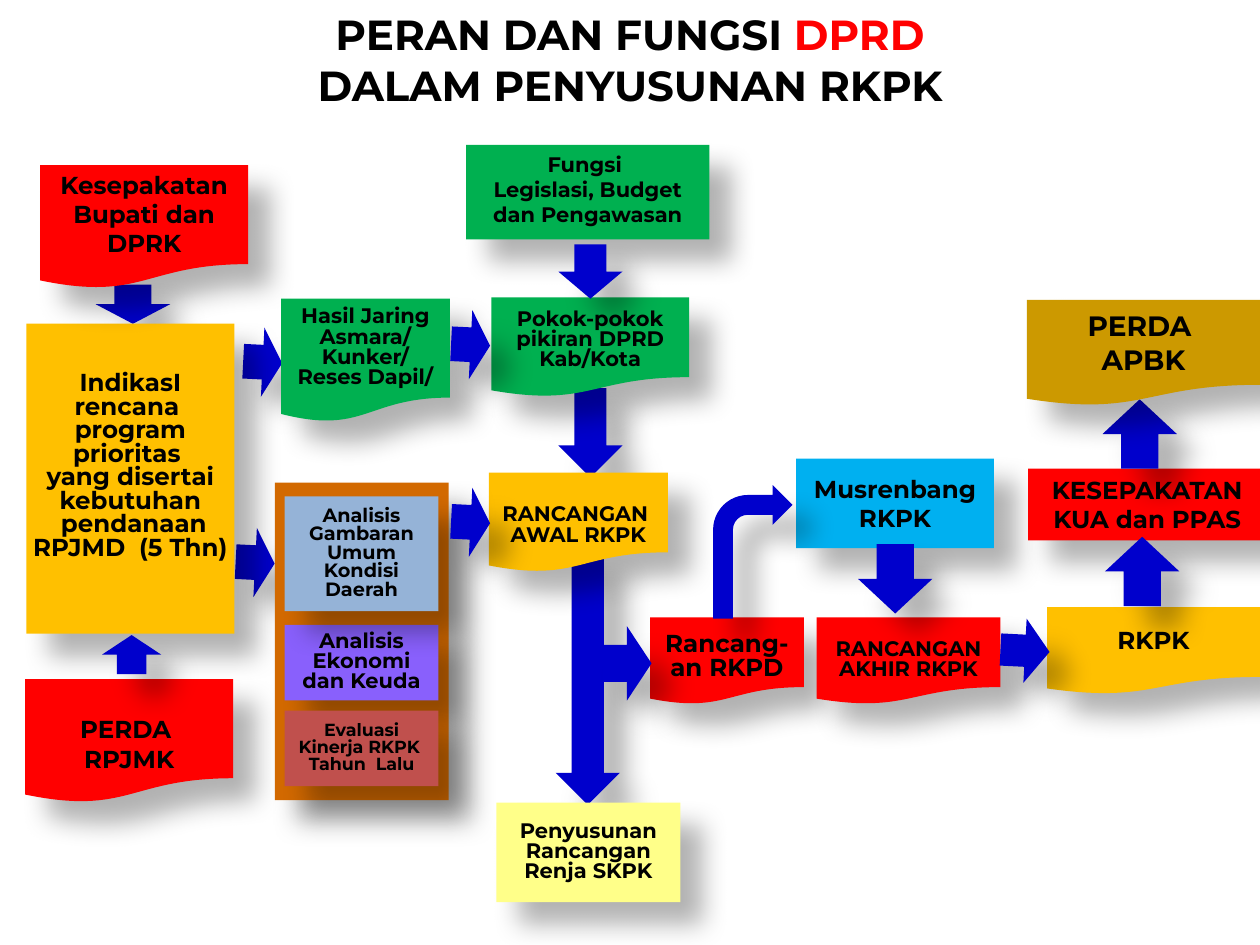
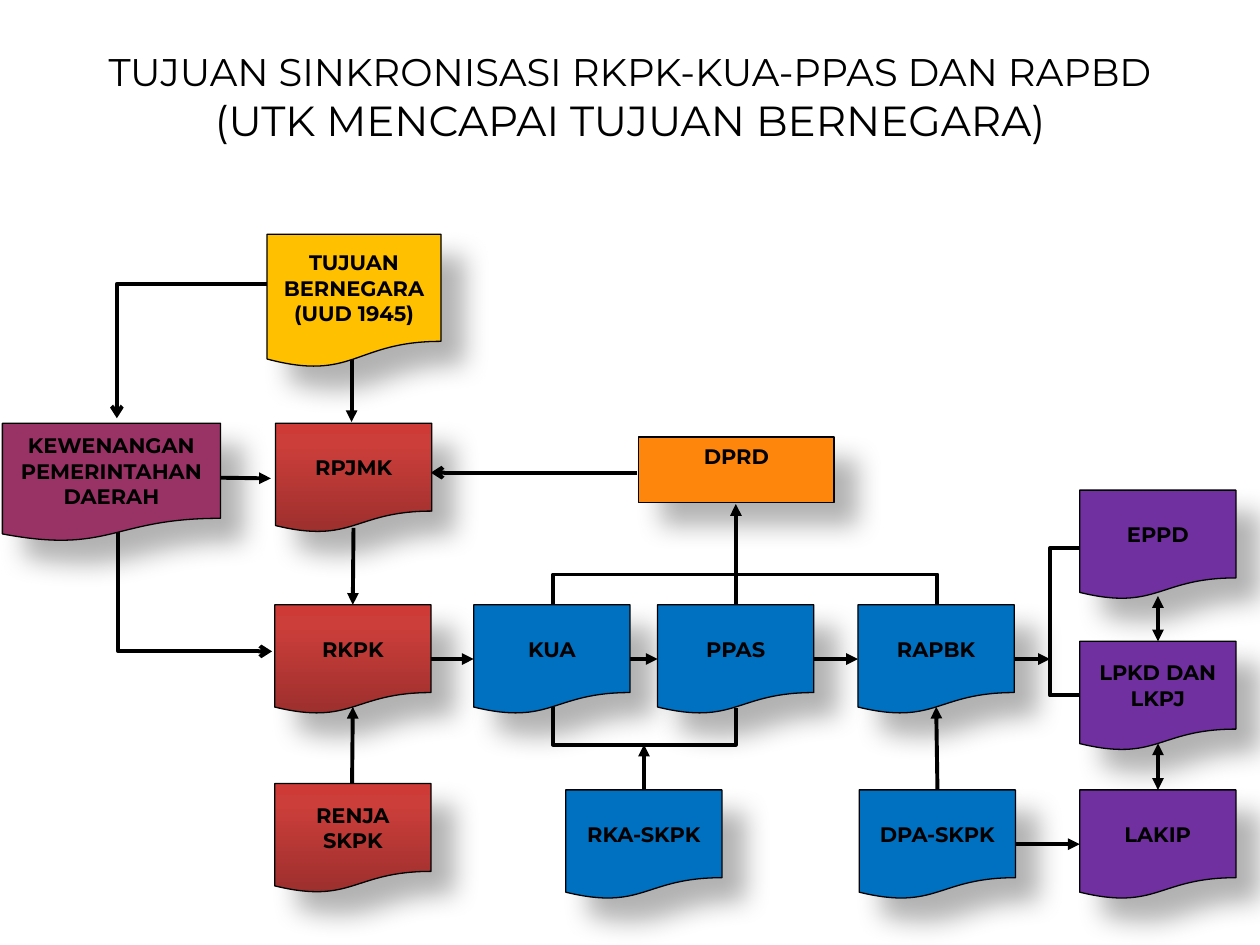
from copy import deepcopy

from lxml import etree
from pptx import Presentation
from pptx.dml.color import RGBColor
from pptx.enum.shapes import MSO_CONNECTOR, MSO_SHAPE
from pptx.enum.text import MSO_ANCHOR, PP_ALIGN
from pptx.oxml.ns import qn
from pptx.util import Pt

COLORS = {
    "black": "000000", "red": "FF0000", "amber": "FFC000", "green": "00B050",
    "arrow": "0000CC", "frame": "D26900", "violet": "8960FC", "steel": "95B3D7",
    "brick": "C0504D", "cream": "FFFF89", "sky": "00B0F0", "gold": "CC9900",
    "blue": "0070C0", "orange": "FF860D", "purple": "7030A0", "plum": "993366",
}
BRICK_STOPS = [(0, "9C2F2D"), (0.8, "CB3E3A"), (1, "CE3B37")]
FONT = "Montserrat"
DOC, RECT = MSO_SHAPE.FLOWCHART_DOCUMENT, MSO_SHAPE.RECTANGLE
TOP, MIDDLE, BOTTOM = MSO_ANCHOR.TOP, MSO_ANCHOR.MIDDLE, MSO_ANCHOR.BOTTOM
DOC_W, DOC_H = 89.3, 62.6
RIGHT = 272.9  # clockwise turn that makes a down arrow point right, slightly tilted


def rgb(name):
    return RGBColor.from_string(COLORS[name])


def set_all(obj, values):
    for name, value in values.items():
        setattr(obj, name, value)


def add_shadow(sp):
    """Soft shadow cast to the lower right, whatever the rotation."""
    spPr = sp._element.spPr
    sp.shadow.inherit = False
    effects = spPr.find(qn("a:effectLst"))
    shadow = etree.SubElement(effects, qn("a:outerShdw"), {
        "blurRad": str(Pt(15)), "dist": str(Pt(18)), "dir": "2700000",
        "algn": "ctr", "rotWithShape": "0"})
    color = etree.SubElement(shadow, qn("a:srgbClr"), val=COLORS["black"])
    etree.SubElement(color, qn("a:alpha"), val="30000")


def fill_gradient(sp):
    sp.fill.gradient()
    sp.fill.gradient_angle = 90
    stops = sp._element.spPr.find(".//" + qn("a:gsLst"))
    stops.append(deepcopy(stops[-1]))
    for stop, (position, color) in zip(sp.fill.gradient_stops, BRICK_STOPS):
        stop.position = position
        stop.color.rgb = RGBColor.from_string(color)


def add_figure(slide, kind, at, fill, outlined=False):
    sp = slide.shapes.add_shape(kind, *map(Pt, at))
    if fill == "gradient":
        fill_gradient(sp)
    else:
        sp.fill.solid()
        sp.fill.fore_color.rgb = rgb(fill)
    if outlined:
        sp.line.color.rgb = rgb("black")
        sp.line.width = Pt(0.75)
    else:
        sp.line.fill.background()
    add_shadow(sp)
    return sp


def write(tf, lines, spacing=None):
    """Each line is a paragraph: a list of (text, size, bold, colour) runs."""
    tf.word_wrap = True
    for i, runs in enumerate(lines):
        p = tf.paragraphs[0] if i == 0 else tf.add_paragraph()
        p.alignment = PP_ALIGN.CENTER
        if spacing:
            p.line_spacing = spacing
        for text, size, bold, color in runs:
            r = p.add_run()
            r.text = text
            set_all(r.font, {"name": FONT, "size": Pt(size), "bold": bold})
            r.font.color.rgb = rgb(color)


def add_box(slide, kind, at, fill, lines, size=12, anchor=MIDDLE,
            spacing=None, margins=None, outlined=False):
    sp = add_figure(slide, kind, at, fill, outlined)
    sp.text_frame.vertical_anchor = anchor
    set_all(sp.text_frame, margins or {})
    write(sp.text_frame, [[(line, size, True, "black")] for line in lines], spacing)


def add_arrow(slide, at, rotation=0, kind=MSO_SHAPE.DOWN_ARROW):
    add_figure(slide, kind, at, "arrow").rotation = rotation


def add_title(slide, at, lines, anchor=TOP):
    tb = slide.shapes.add_textbox(*map(Pt, at))
    tb.text_frame.vertical_anchor = anchor
    write(tb.text_frame, lines)


def add_link(slide, points, end=None, start=None):
    """Straight connector for two points, an open right-angled path for more."""
    pts = [(Pt(x), Pt(y)) for x, y in points]
    if len(pts) == 2:
        sp = slide.shapes.add_connector(MSO_CONNECTOR.STRAIGHT, *pts[0], *pts[1])
        etree.SubElement(sp._element.spPr, qn("a:effectLst"))
    else:
        builder = slide.shapes.build_freeform(*pts[0])
        builder.add_line_segments(pts[1:], close=False)
        sp = builder.convert_to_shape()
        sp.fill.background()
        sp.shadow.inherit = False
    sp.line.color.rgb = rgb("black")
    sp.line.width = Pt(2.25)
    ln = sp.line._get_or_add_ln()
    for tag, head in (("a:headEnd", start), ("a:tailEnd", end)):
        if head:
            etree.SubElement(ln, qn(tag), type=head)


def build_roles(slide):
    for at, turn in [
        ((317.5, 318.2, 36.7, 141.8), 0),
        ((319, 221.8, 36.7, 51.1), 0),
        ((54.7, 162.7, 42.5, 22.3), 0),
        ((126, 310.3, 39.6, 22.3), RIGHT),
        ((130.3, 195.8, 39.6, 22.3), RIGHT),
    ]:
        add_arrow(slide, at, turn)

    flush = {f"margin_{side}": 0 for side in ("left", "right", "top")}
    flush["margin_bottom"] = Pt(13.6)
    lowered = {"margin_top": Pt(20.6)}
    for kind, at, fill, lines, size, anchor, spacing, margins in [
        (RECT, (15.1, 185, 118.8, 177.1), "amber",
         ["IndikasI rencana ", "program prioritas ", "yang disertai kebutuhan",
          " pendanaan", "RPJMD  (5 Thn)"], 14, MIDDLE, 0.8, flush),
        (DOC, (23, 94.3, 118.8, 70.6), "red",
         ["Kesepakatan", "Bupati dan DPRK"], 14, BOTTOM, None, None),
        (DOC, (14.4, 388.1, 118.8, 70.6), "red",
         ["PERDA ", "RPJMK"], 14, MIDDLE, None, lowered),
        (DOC, (280.8, 169.9, 113, 56.9), "green",
         ["Pokok-pokok pikiran DPRD Kab/Kota"], 12, BOTTOM, 0.8, None),
        (DOC, (160.6, 170.6, 96.5, 70.6), "green",
         ["Hasil Jaring Asmara/", "Kunker/", "Reses Dapil/"], 12, MIDDLE, 0.8, None),
        (DOC, (279.4, 270, 102.2, 56.9), "amber",
         ["RANCANGAN ", "AWAL RKPK"], 12, BOTTOM, 0.8, None),
        (RECT, (157, 275.8, 99.4, 181.4), "frame", [], 12, MIDDLE, None, None),
        (RECT, (162.7, 357.1, 87.8, 43.2), "violet",
         ["Analisis Ekonomi dan Keuda"], 12, MIDDLE, 0.8, None),
        (RECT, (162.7, 283.7, 87.8, 65.5), "steel",
         ["Analisis Gambaran Umum Kondisi Daerah"], 11, MIDDLE, 0.8, None),
        (RECT, (162.7, 406.1, 87.8, 43.2), "brick",
         ["Evaluasi Kinerja RKPK  Tahun  Lalu"], 10, MIDDLE, 0.8, None),
        (RECT, (283.7, 458.6, 105.1, 56.9), "cream",
         ["Penyusunan Rancangan Renja SKPK"], 12, MIDDLE, 0.8, None),
        (DOC, (371.5, 352.8, 87.8, 49.7), "red",
         ["Rancang-an RKPD"], 14, BOTTOM, 0.8, None),
        (RECT, (455, 262.1, 113, 51.1), "sky",
         ["Musrenbang RKPK"], 14, MIDDLE, None, None),
        (DOC, (598.3, 347, 121.7, 49.7), "amber", ["RKPK"], 14, MIDDLE, 0.8, None),
        (RECT, (587.5, 267.8, 136.1, 41), "red",
         ["KESEPAKATAN", "KUA dan PPAS"], 14, MIDDLE, None, None),
        (RECT, (266.4, 82.8, 139, 54), "green",
         ["Fungsi ", "Legislasi, Budget", "dan Pengawasan"], 12, TOP, None, None),
        (DOC, (466.6, 352.8, 105.1, 49.7), "red",
         ["RANCANGAN", "AKHIR RKPK"], 12, BOTTOM, 0.8, None),
    ]:
        add_box(slide, kind, at, fill, lines, size, anchor, spacing, margins)

    for at, turn in [
        ((249.1, 185.8, 39.6, 22.3), RIGHT),
        ((249.1, 287.3, 39.6, 22.3), RIGHT),
        ((58.3, 362.9, 33.8, 22.3), 180),
        ((337, 365, 42.5, 28.1), 270),
        ((631.4, 306.7, 42.5, 39.6), 180),
        ((319, 139.7, 36.7, 31), 0),
        ((630, 228.2, 42.5, 39.6), 180),
        ((490.3, 311, 42.5, 39.6), 0),
        ((567.4, 357.8, 36.7, 28.1), RIGHT),
    ]:
        add_arrow(slide, at, turn)
    add_arrow(slide, (407.5, 277.2, 45.4, 76.3), kind=MSO_SHAPE.BENT_ARROW)
    add_box(slide, DOC, (586.8, 171.4, 133.2, 60.5), "gold", ["PERDA ", "APBK"], 16)
    add_title(slide, (0, 1.4, 720, 65.5), [
        [("PERAN DAN FUNGSI ", 24, True, "black"), ("DPRD", 24, True, "red")],
        [("DALAM PENYUSUNAN RKPK", 24, True, "black")]])


def build_synchronisation(slide):
    add_title(slide, (0, 21.6, 720, 67), [
        [("TUJUAN SINKRONISASI RKPK-KUA-PPAS DAN RAPBD", 22, False, "black")],
        [("(UTK MENCAPAI TUJUAN BERNEGARA)", 24, False, "black")]], MIDDLE)

    for label, x, y, fill in [
        ("RPJMK", 157.5, 241.9, "gradient"),
        ("RKPK", 157, 345.6, "gradient"),
        ("RENJA SKPK", 157, 447.8, "gradient"),
        ("KUA", 270.7, 345.6, "blue"),
        ("PPAS", 375.8, 345.6, "blue"),
        ("RAPBK", 490.3, 345.6, "blue"),
        ("RKA-SKPK", 323.3, 451.4, "blue"),
        ("DPA-SKPK", 491, 451.4, "blue"),
        ("EPPD", 617, 280.1, "purple"),
        ("LPKD DAN LKPJ", 617, 366.5, "purple"),
        ("LAKIP", 617, 451.4, "purple"),
    ]:
        add_box(slide, DOC, (x, y, DOC_W, DOC_H), fill, [label], outlined=True)
    add_box(slide, RECT, (365, 249.8, 111.6, 37.4), "orange", ["DPRD"],
            anchor=TOP, outlined=True)

    flow_y, bridge_y, bracket_y, bracket_x = 376.6, 328.3, 425.5, 600
    for points in [
        [(201.2, 447.8), (201.6, 403.9)],
        [(368, 451.4), (368, bracket_y)],
        [(420.5, 345.6), (420.5, 288)],
        [(246.2, flow_y), (270.7, flow_y)],
        [(360, flow_y), (375.8, flow_y)],
        [(464.7, flow_y), (490.3, flow_y)],
        [(579.2, flow_y), (bracket_x, flow_y)],
        [(202, 301.7), (201.6, 345.6)],
        [(200.9, 204.5), (200.9, 241.2)],
        [(126, 273), (154.8, 273.4)],
        [(535.7, 451.4), (535, 403.9)],
        [(580.3, 482.4), (617, 482.4)],
    ]:
        add_link(slide, points, "triangle")
    for top, bottom in ((340.6, 366.5), (424.8, 451.4)):
        add_link(slide, [(661.7, top), (661.7, bottom)], "triangle", "triangle")
    for points in [
        [(364.3, 270.1), (246.2, 270.1)],
        [(154.8, 162.2), (66.8, 162.2), (66.8, 239)],
        [(67.5, 292.3), (67.5, 372.2), (155.5, 372.2)],
    ]:
        add_link(slide, points, "arrow")
    for points in [
        [(316, 403.9), (316, bracket_y), (420.5, bracket_y), (420.5, 404.6)],
        [(316, 345.6), (316, bridge_y), (535.5, bridge_y), (535.5, 345.6)],
        [(617.4, 397.4), (bracket_x, 397.4), (bracket_x, 313.2), (617, 313.2)],
    ]:
        add_link(slide, points)

    add_box(slide, DOC, (1.4, 241.9, 124.6, 67.7), "plum",
            ["KEWENANGAN PEMERINTAHAN DAERAH"], outlined=True)
    add_box(slide, DOC, (152.6, 133.9, 99.4, 76.3), "amber",
            ["TUJUAN BERNEGARA", "(UUD 1945)"], outlined=True)


def main():
    prs = Presentation()
    set_all(prs, {"slide_width": Pt(720), "slide_height": Pt(540)})
    for build in (build_roles, build_synchronisation):
        build(prs.slides.add_slide(prs.slide_layouts[6]))
    prs.save("out.pptx")


if __name__ == "__main__":
    main()
